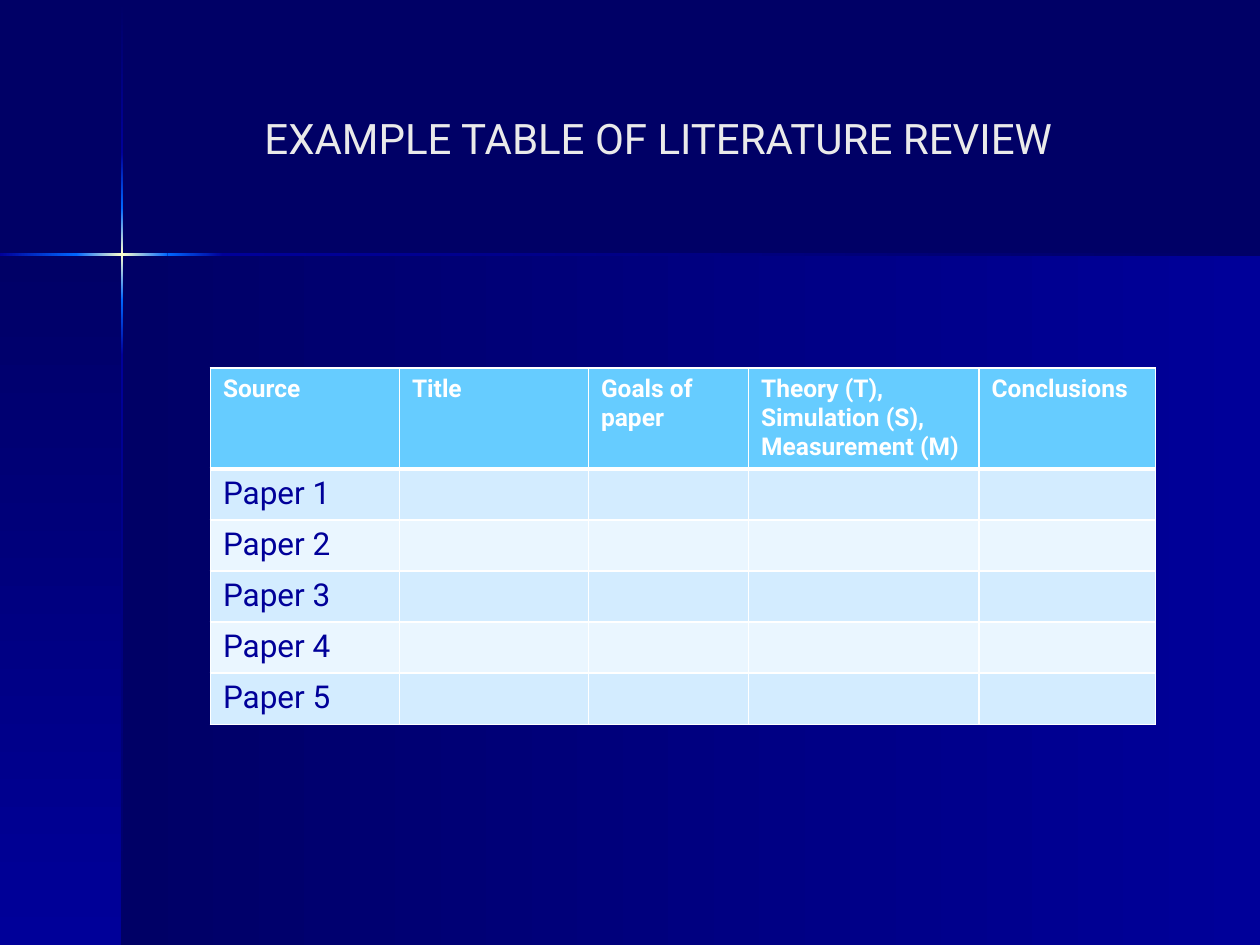
from copy import deepcopy
from dataclasses import dataclass

from pptx import Presentation
from pptx.dml.color import RGBColor
from pptx.enum.shapes import MSO_SHAPE
from pptx.enum.text import MSO_ANCHOR
from pptx.oxml.ns import qn
from pptx.oxml.xmlchemy import OxmlElement
from pptx.slide import Slide
from pptx.table import _Cell as Cell
from pptx.text.text import TextFrame
from pptx.util import Pt

FONT = "Roboto"
DARK, NAVY, BLUE, GLOW, WHITE = "000066", "000099", "0066FF", "FFFFCC", "FFFFFF"
HEAD, BANDS = "66CCFF", ("D3ECFF", "EAF6FF")
WIDE, HIGH = 720, 540
CROSS_X, CROSS_Y, THICK = 69.84, 145.44, 1.44


@dataclass
class Bar:
    left: float
    top: float
    width: float
    height: float
    stops: tuple[str, ...]
    down: bool = False


def color(code: str) -> RGBColor:
    return RGBColor.from_string(code)


def draw_bar(slide: Slide, bar: Bar) -> None:
    shape = slide.shapes.add_shape(
        MSO_SHAPE.RECTANGLE, Pt(bar.left), Pt(bar.top), Pt(bar.width), Pt(bar.height))
    shape.shadow.inherit = False
    shape.line.fill.background()
    fill = shape.fill
    fill.gradient()
    fill.gradient_angle = 270 if bar.down else 0
    stop_list = shape._element.spPr.find(".//" + qn("a:gsLst"))
    for _ in bar.stops[2:]:
        stop_list.append(deepcopy(stop_list[0]))
    for i, (stop, code) in enumerate(zip(fill.gradient_stops, bar.stops)):
        stop.position = i / (len(bar.stops) - 1)
        stop.color.rgb = color(code)


def write(frame: TextFrame, text: str, size: float, code: str, bold: bool = False) -> None:
    frame.text = text
    for run in frame.paragraphs[0].runs:
        run.font.name = FONT
        run.font.size = Pt(size)
        run.font.bold = bold
        run.font.color.rgb = color(code)


def set_edge(cell: Cell, side: str, width: float) -> None:
    line = OxmlElement(f"a:ln{side}")
    line.set("w", str(Pt(width)))
    fill = OxmlElement("a:solidFill")
    tint = OxmlElement("a:srgbClr")
    tint.set("val", WHITE)
    fill.append(tint)
    line.append(fill)
    cell._tc.get_or_add_tcPr().append(line)


def draw_table(slide: Slide, rows: list[list[str]], widths: list[float],
               heights: list[float]) -> None:
    table = slide.shapes.add_table(
        len(rows), len(widths), Pt(120.24), Pt(210.24),
        Pt(sum(widths)), Pt(sum(heights))).table
    for col, width in zip(table.columns, widths):
        col.width = Pt(width)
    for r, (texts, height) in enumerate(zip(rows, heights)):
        table.rows[r].height = Pt(height)
        for c, text in enumerate(texts):
            cell = table.cell(r, c)
            edges = {"L": 1, "R": 1, "T": 3 if r == 1 else 1, "B": 3 if r == 0 else 1}
            for side, width in edges.items():
                set_edge(cell, side, width)
            cell.fill.solid()
            cell.fill.fore_color.rgb = color(BANDS[(r - 1) % 2] if r else HEAD)
            if r == 0:
                write(cell.text_frame, text, 14, WHITE, True)
            else:
                write(cell.text_frame, text, 18, NAVY)


def main() -> None:
    deck = Presentation()
    deck.slide_width, deck.slide_height = Pt(WIDE), Pt(HIGH)
    slide = deck.slides.add_slide(deck.slide_layouts[6])
    slide.background.fill.solid()
    slide.background.fill.fore_color.rgb = color(DARK)

    # Panels below the title
    bars = [
        Bar(CROSS_X, CROSS_Y, WIDE - CROSS_X, HIGH - CROSS_Y, (DARK, NAVY)),
        Bar(0, CROSS_Y, CROSS_X, HIGH - CROSS_Y, (DARK, NAVY), True),
    ]

    # Glowing cross, each arm cut into segments
    tail = [(BLUE, GLOW, BLUE), (BLUE, NAVY), (NAVY, DARK)]
    across = [0, 43.56, 95.76, 127.44, WIDE]
    down = [0.72, 87.12, 118.8, 171.36, 203.04, HIGH]
    x, y = CROSS_X - THICK / 2, CROSS_Y - THICK / 2
    for start, end, stops in zip(across, across[1:], [(NAVY, BLUE), *tail]):
        bars.append(Bar(start, y, end - start, THICK, stops))
    for start, end, stops in zip(down, down[1:], [(DARK, NAVY), (NAVY, BLUE), *tail]):
        bars.append(Bar(x, start, THICK, end - start, stops, True))
    for bar in bars:
        draw_bar(slide, bar)

    # Title
    title = slide.shapes.add_textbox(Pt(144), Pt(43.5), Pt(527), Pt(70.5)).text_frame
    title.word_wrap = True
    title.vertical_anchor = MSO_ANCHOR.MIDDLE
    write(title, "EXAMPLE TABLE OF LITERATURE REVIEW", 24, "EAEAEA")

    # Review table
    heads = ["Source", "Title", "Goals of paper",
             "Theory (T), Simulation (S), Measurement (M)", "Conclusions"]
    papers = [[f"Paper {n}"] + [""] * (len(heads) - 1) for n in range(1, 6)]
    draw_table(slide, [heads, *papers], [108, 108, 91.5, 131.75, 100.75],
               [56.6] + [29.2] * len(papers))

    deck.save("out.pptx")


if __name__ == "__main__":
    main()
